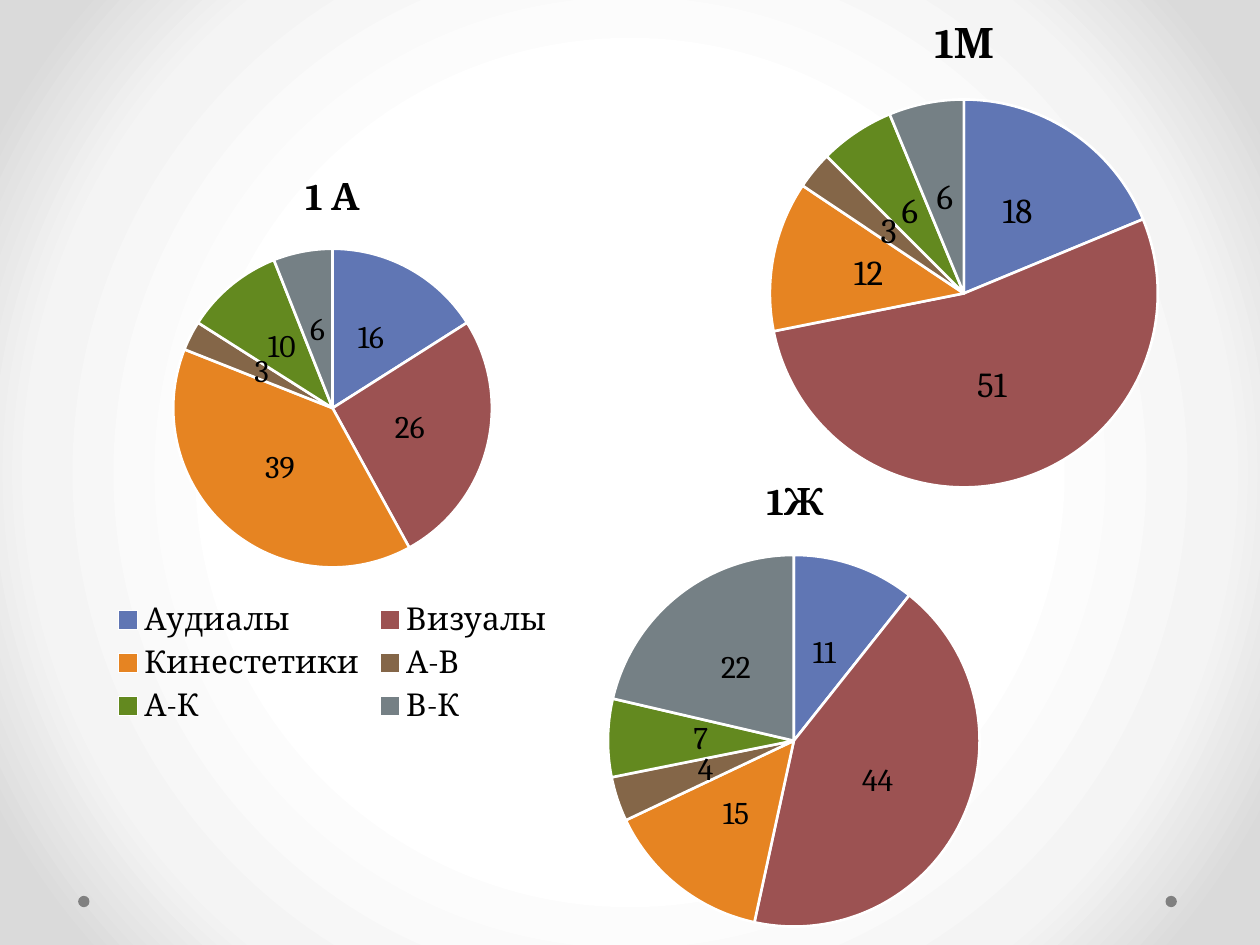
"""Slide with three pie charts of perception types in classes 1 А, 1М and 1Ж."""
from lxml import etree
from pptx import Presentation
from pptx import util as u
from pptx.chart.data import CategoryChartData
from pptx.dml.color import RGBColor
from pptx.enum import chart as ch, shapes
from pptx.oxml import parse_xml
from pptx.oxml.ns import nsdecls, qn

BLACK = RGBColor(0x00, 0x00, 0x00)
WHITE = RGBColor(0xFF, 0xFF, 0xFF)
GREY = RGBColor(0x80, 0x80, 0x80)
SLICES = [RGBColor.from_string(code) for code in
          ("6076B4", "9C5252", "E68422", "846648", "63891F", "758085")]
BACKDROP = ((50, "FFFFFF"), (76, "F4F4F4"), (92, "DADADA"))
TYPES = ["Аудиалы", "Визуалы", "Кинестетики", "А-В", "А-К", "В-К"]
NUMBERS = ["1", "2", "3", "4", "5", "6"]
CLASSES = [
    ("1 А", "Series 1", TYPES, (16, 26, 39, 3, 10, 6), 18,
     (0.11, 1.16, 5.06, 4.64), (2.64, 3.24, 2.53)),
    ("1Ж", "Series 1", NUMBERS, (11, 44, 15, 4, 7, 22), 18,
     (3.74, 3.6, 5.14, 3.9), (6.3, 5.88, 2.95)),
    ("1М", "1М", NUMBERS, (18, 51, 12, 3, 6, 6), 20,
     (5.53, -0.07, 4.24, 4.08), (7.65, 2.33, 3.08)),
]


def write(frame, words, size=18, bold=False, color=BLACK, face="Cambria"):
    frame.text = words
    font = frame.paragraphs[0].runs[0].font
    font.size, font.bold, font.name = u.Pt(size), bold, face
    font.color.rgb = color


def place_pie(chart, box, circle):
    left, top, width, height = box
    x, y, diameter = circle
    shares = {"x": (x - diameter / 2 - left) / width,
              "y": (y - diameter / 2 - top) / height,
              "w": diameter / width, "h": diameter / height}
    plot_area = chart._chartSpace.chart.plotArea
    for old in plot_area.findall(qn("c:layout")):
        plot_area.remove(old)
    layout = etree.Element(qn("c:layout"))
    manual = etree.SubElement(layout, qn("c:manualLayout"))
    settings = {"layoutTarget": "inner", "xMode": "edge", "yMode": "edge"}
    settings.update((key, f"{share:.4f}") for key, share in shares.items())
    for key, setting in settings.items():
        etree.SubElement(manual, qn("c:" + key)).set("val", setting)
    plot_area.insert(0, layout)


deck = Presentation()
deck.slide_width, deck.slide_height = u.Inches(10), u.Inches(7.5)
slide = deck.slides.add_slide(deck.slide_layouts[6])

backdrop = slide.background.fill
backdrop.gradient()
gradient = slide._element.find(".//" + qn("a:gradFill"))
stops = "".join(f'<a:gs pos="{share * 1000}"><a:srgbClr val="{code}"/></a:gs>'
                for share, code in BACKDROP)
gradient.getparent().replace(gradient, parse_xml(
    f'<a:gradFill {nsdecls("a")} rotWithShape="1"><a:gsLst>{stops}</a:gsLst>'
    '<a:path path="circle"><a:fillToRect l="50000" t="50000" r="50000" b="50000"/>'
    '</a:path></a:gradFill>'))

for left in (9.25, 0.62):
    dot = slide.shapes.add_shape(shapes.MSO_SHAPE.OVAL, u.Inches(left), u.Inches(7.11),
                                 u.Inches(0.09), u.Inches(0.09))
    dot.shadow.inherit = False
    dot.fill.solid()
    dot.fill.fore_color.rgb = GREY
    dot.line.fill.background()

for heading, series_name, categories, counts, size, box, circle in CLASSES:
    table = CategoryChartData()
    table.categories = categories
    table.add_series(series_name, counts)
    pie = slide.shapes.add_chart(ch.XL_CHART_TYPE.PIE, *map(u.Inches, box), table).chart
    pie.font.size, pie.font.name = u.Pt(size), "Cambria"
    pie.font.color.rgb = BLACK
    pie.has_title = True
    write(pie.chart_title.text_frame, heading, size=size * 1.2, bold=True)
    pie.chart_title.include_in_layout = False
    pie.has_legend = categories is TYPES
    if pie.has_legend:
        pie.legend.position = ch.XL_LEGEND_POSITION.BOTTOM
        pie.legend.include_in_layout = False
    plot = pie.plots[0]
    plot.vary_by_categories = True
    plot.has_data_labels = True
    plot.data_labels.show_value = True
    plot.data_labels.show_percentage = False
    plot.data_labels.position = ch.XL_LABEL_POSITION.CENTER
    for index, color in enumerate(SLICES):
        wedge = plot.series[0].points[index].format
        wedge.fill.solid()
        wedge.fill.fore_color.rgb = color
        wedge.line.color.rgb = WHITE
        wedge.line.width = u.Pt(1.5)
    place_pie(pie, box, circle)

deck.save("out.pptx")
